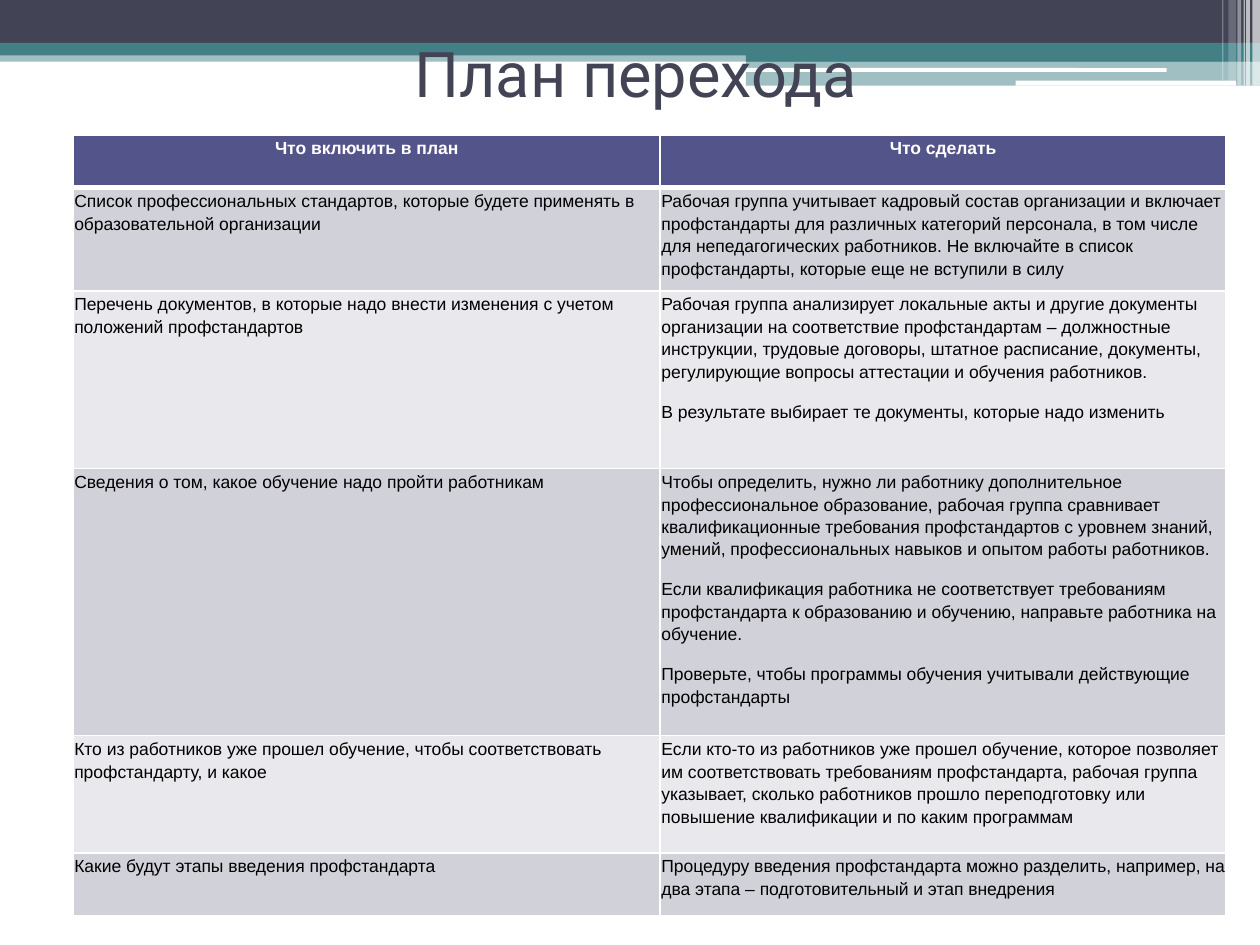
from lxml.etree import SubElement
from pptx import Presentation
from pptx.dml.color import RGBColor
from pptx.enum.shapes import MSO_SHAPE
from pptx.enum.text import MSO_ANCHOR, PP_ALIGN
from pptx.oxml.ns import qn
from pptx.util import Inches, Pt

DARK, TEAL, WHITE, BLACK = "424456", "438086", "FFFFFF", "000000"
HEAD, ODD, EVEN = "53548A", "D1D1DA", "E9E9ED"

BANDS = [
    (0, 4, 100, 0.9, TEAL, 50),
    (0, 0, 100, 3.4, DARK, 100),
    (0, 3.4, 100, 1, TEAL, 100),
    (59.2, 3.9, 40.8, 1, TEAL, 100),
    (59.2, 4.8, 40.8, 2, TEAL, 50),
]
PILLS = [(59.1, 5.4, 33.5, 0.3), (80.6, 6.4, 17.5, 0.4)]
STRIPES = [
    (99.4, 0.6, 6.8, 65),
    (98.9, 0.3, 6.8, 65),
    (98.7, 0.1, 6.8, 60),
    (98.2, 0.3, 6.8, 40),
    (97.5, 0.6, 6.4, 20),
    (97, 0.1, 6.4, 30),
]

WIDTHS = [46.6, 44.9]
HEIGHTS = [4.2, 8.2, 14.1, 21.2, 9.3, 5]
PLAN = [
    ("Что включить в план", "Что сделать"),
    ("Список профессиональных стандартов, которые будете применять в образовательной организации",
     "Рабочая группа учитывает кадровый состав организации и включает профстандарты для различных "
     "категорий персонала, в том числе для непедагогических работников. Не включайте в список "
     "профстандарты, которые еще не вступили в силу"),
    ("Перечень документов, в которые надо внести изменения с учетом положений профстандартов",
     "Рабочая группа анализирует локальные акты и другие документы организации на соответствие "
     "профстандартам – должностные инструкции, трудовые договоры, штатное расписание, документы, "
     "регулирующие вопросы аттестации и обучения работников.\n"
     "В результате выбирает те документы, которые надо изменить"),
    ("Сведения о том, какое обучение надо пройти работникам",
     "Чтобы определить, нужно ли работнику дополнительное профессиональное образование, рабочая "
     "группа сравнивает квалификационные требования профстандартов с уровнем знаний, умений, "
     "профессиональных навыков и опытом работы работников.\n"
     "Если квалификация работника не соответствует требованиям профстандарта к образованию и "
     "обучению, направьте работника на обучение.\n"
     "Проверьте, чтобы программы обучения учитывали действующие профстандарты"),
    ("Кто из работников уже прошел обучение, чтобы соответствовать профстандарту, и какое",
     "Если кто-то из работников уже прошел обучение, которое позволяет им соответствовать "
     "требованиям профстандарта, рабочая группа указывает, сколько работников прошло переподготовку "
     "или повышение квалификации и по каким программам"),
    ("Какие будут этапы введения профстандарта",
     "Процедуру введения профстандарта можно разделить, например, на два этапа – подготовительный "
     "и этап внедрения"),
]


def color(code):
    return RGBColor.from_string(code)


class Deck:
    font, size = "Arial", 10

    def __init__(self):
        self.prs = Presentation()
        self.prs.slide_width, self.prs.slide_height = Inches(10), Inches(7.5)
        self.slide = self.prs.slides.add_slide(self.prs.slide_layouts[5])
        self.cell_w = self.prs.slide_width / 100
        self.cell_h = self.prs.slide_height / 75

    def place(self, col, row, cols, rows):
        return (round(col * self.cell_w), round(row * self.cell_h),
                round(cols * self.cell_w), round(rows * self.cell_h))

    def block(self, box, fill, alpha=100, kind=MSO_SHAPE.RECTANGLE):
        shape = self.slide.shapes.add_shape(kind, *self.place(*box))
        shape.shadow.inherit = False
        shape.line.fill.background()
        shape.fill.solid()
        shape.fill.fore_color.rgb = color(fill)
        if alpha < 100:
            tone = shape.fill._xPr.find(".//" + qn("a:srgbClr"))
            SubElement(tone, qn("a:alpha"), val=str(alpha * 1000))

    def style(self, para, font, size, fill, bold=False):
        for run in para.runs:
            run.font.name, run.font.size, run.font.bold = font, Pt(size), bold
            run.font.color.rgb = color(fill)

    def title(self, box, text):
        shape = self.slide.shapes.title
        shape.left, shape.top, shape.width, shape.height = self.place(*box)
        frame = shape.text_frame
        frame.text = text
        frame.word_wrap = True
        frame.vertical_anchor = MSO_ANCHOR.MIDDLE
        frame.paragraphs[0].alignment = PP_ALIGN.LEFT
        self.style(frame.paragraphs[0], "Roboto", 36, DARK)
        self.slide.shapes._spTree.append(shape._element)

    def border(self, cell, sides):
        props = cell._tc.get_or_add_tcPr()
        for spot, (side, width) in enumerate(sides.items()):
            line = props.makeelement(qn("a:" + side), {"w": str(Pt(width))})
            fill = SubElement(line, qn("a:solidFill"))
            SubElement(fill, qn("a:srgbClr"), val=WHITE)
            props.insert(spot, line)

    def cell(self, cell, text, row):
        head = row == 0
        cell.fill.solid()
        cell.fill.fore_color.rgb = color(HEAD if head else ODD if row % 2 else EVEN)
        cell.margin_left = cell.margin_right = Inches(0.01)
        cell.margin_top = cell.margin_bottom = Inches(0.01)
        cell.text_frame.text = text
        for para in cell.text_frame.paragraphs:
            para.alignment = PP_ALIGN.CENTER if head else PP_ALIGN.LEFT
            para.line_spacing, para.space_after = 1.15, Pt(10)
            self.style(para, self.font, self.size, WHITE if head else BLACK, head)
        self.border(cell, {"lnL": 1, "lnR": 1, "lnT": 3 if row == 1 else 1, "lnB": 3 if head else 1})

    def table(self, col, row, widths, heights, data):
        box = self.place(col, row, sum(widths), sum(heights))
        table = self.slide.shapes.add_table(len(heights), len(widths), *box).table
        for item, width in zip(table.columns, widths):
            item.width = round(width * self.cell_w)
        for item, height in zip(table.rows, heights):
            item.height = round(height * self.cell_h)
        for r, texts in enumerate(data):
            for c, text in enumerate(texts):
                self.cell(table.cell(r, c), text, r)


def main():
    deck = Deck()
    for *box, fill, alpha in BANDS:
        deck.block(box, fill, alpha)
    for box in PILLS:
        deck.block(box, WHITE, kind=MSO_SHAPE.ROUNDED_RECTANGLE)
    for col, width, height, alpha in STRIPES:
        deck.block((col, 0, width, height), WHITE, alpha)
    deck.title((31.9, 3, 43.1, 5.4), "План перехода")
    deck.table(5.8, 10.7, WIDTHS, HEIGHTS, PLAN)
    deck.prs.save("out.pptx")


if __name__ == "__main__":
    main()
